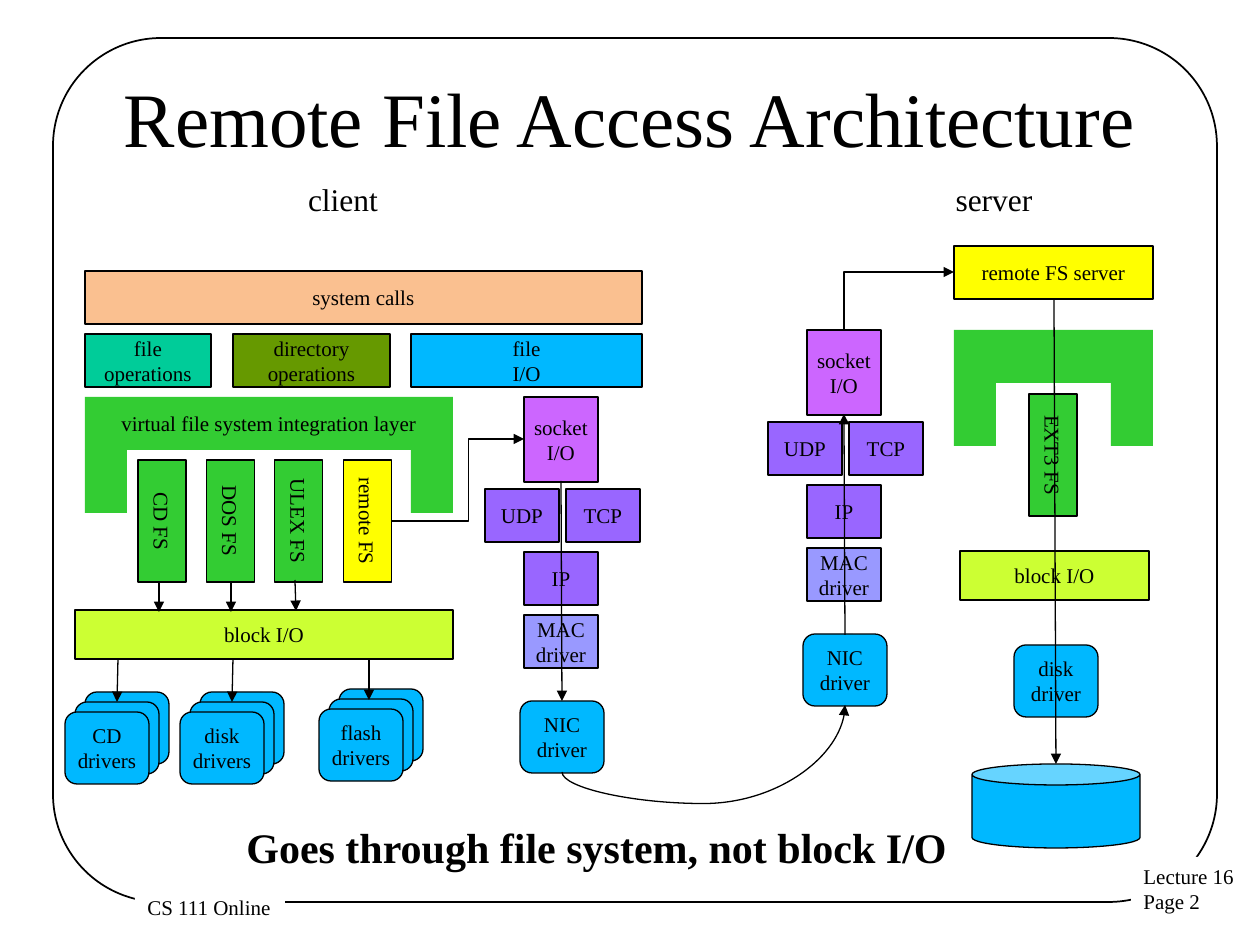
"""Build the Remote File Access Architecture slide."""
import pptx
import pptx.dml.color
import pptx.enum.shapes
import pptx.enum.text
import pptx.oxml
import pptx.oxml.ns
import pptx.util

RGBColor = pptx.dml.color.RGBColor
Kind = pptx.enum.shapes.MSO_SHAPE
Route = pptx.enum.shapes.MSO_CONNECTOR
Align = pptx.enum.text.PP_ALIGN
Anchor = pptx.enum.text.MSO_ANCHOR

BLACK = RGBColor(0x00, 0x00, 0x00)
WHITE = RGBColor(0xFF, 0xFF, 0xFF)
PEACH = RGBColor(0xFA, 0xC0, 0x90)
TEAL = RGBColor(0x00, 0xCC, 0x99)
OLIVE = RGBColor(0x66, 0x99, 0x00)
BLUE = RGBColor(0x00, 0xB8, 0xFF)
GREEN = RGBColor(0x33, 0xCC, 0x33)
YELLOW = RGBColor(0xFF, 0xFF, 0x00)
LIME = RGBColor(0xCC, 0xFF, 0x33)
MAGENTA = RGBColor(0xCC, 0x66, 0xFF)
PURPLE = RGBColor(0x99, 0x66, 0xFF)
LAVENDER = RGBColor(0x99, 0x99, 0xFF)

FONT = "Times New Roman"
PX_PER_INCH = 126
SLIDE_SIZE = (1260, 945)
FRAME = (53, 38, 1164, 864)

FOOTERS = [
    ("Lecture 16\nPage 2", (1131, 857, 117, 64)),
    ("CS 111 Online", (135, 888, 150, 38)),
]
TEXTS = [
    ("Remote File Access Architecture", (63, 38, 1134, 158), 44, False, Align.CENTER, True),
    ("client", (212, 174, 262, 50), 18, False, Align.CENTER, True),
    ("server", (863, 174, 262, 50), 18, False, Align.CENTER, True),
    ("Goes through file system, not block I/O", (234, 815, 734, 64), 24, True, Align.LEFT, False),
]
LAYERS = [
    ("system calls", (85, 271, 557, 53), PEACH),
    ("file\noperations", (85, 334, 126, 53), TEAL),
    ("directory\noperations", (233, 334, 157, 53), OLIVE),
    ("file\nI/O", (411, 334, 231, 53), BLUE),
    ("block I/O", (75, 610, 378, 49), LIME),
    ("remote FS server", (954, 246, 199, 53), YELLOW),
    ("block I/O", (960, 551, 189, 49), LIME),
]
ARCHES = [
    ("virtual file system integration layer", (85, 397), 368),
    ("", (954, 330), 199),
]
ARCH_THICKNESS, ARCH_LEG = 53, (42, 63)

CLIENT_FILE_SYSTEMS = [
    ("CD FS", GREEN), ("DOS FS", GREEN), ("ULEX FS", GREEN), ("remote FS", YELLOW),
]
FILE_SYSTEM_SIZE, FILE_SYSTEM_PITCH = (122, 48), 68.4
CLIENT_FILE_SYSTEM_START = (101, 497)
SERVER_FILE_SYSTEM = ("EXT3 FS", GREEN, (992, 431))

PROTOCOL_ORIGINS = [(524, 397), (807, 330)]
PROTOCOLS = [
    ("socket\nI/O", (0, 0, 74, 85), MAGENTA),
    ("UDP", (-39, 92, 74, 53), PURPLE),
    ("TCP", (42, 92, 74, 53), PURPLE),
    ("IP", (0, 155, 74, 53), PURPLE),
    ("MAC\ndriver", (0, 218, 74, 53), LAVENDER),
]
DRIVER_SIZE, CARD_STEP = (84, 72), 10
DRIVERS = [
    ("CD\ndrivers", (65, 712), 3),
    ("disk\ndrivers", (180, 712), 3),
    ("flash\ndrivers", (319, 709), 3),
    ("NIC\ndriver", (520, 701), 1),
    ("NIC\ndriver", (803, 634), 1),
    ("disk\ndriver", (1014, 645), 1),
]
DISK = (972, 764, 168, 84)

ARROWS = [
    ((159, 582), (159, 612)),
    ((231, 582), (231, 612)),
    ((295, 580), (296, 611)),
    ((118, 660), (117, 702)),
    ((233, 660), (232, 702)),
    ((369, 659), (369, 700)),
    ((561, 481), (562, 701)),
    ((845, 635), (844, 414)),
    ((1054, 299), (1056, 764)),
]
BENDS = [
    (Route.ELBOW, "bentConnector3", (391, 521), (524, 439), 0, 58400),
    (Route.ELBOW, "bentConnector2", (870, 246), (928, 356), 270, None),
    (Route.CURVE, "curvedConnector3", (737, 880), (670, 597), 90, -47100),
]


def emu(*lengths):
    return [pptx.util.Emu(round(length * 914400 / PX_PER_INCH)) for length in lengths]


def write(shape, text, size=12, bold=False, align=Align.CENTER, anchor=Anchor.MIDDLE, wrap=False):
    frame = shape.text_frame
    frame.word_wrap = wrap
    frame.vertical_anchor = anchor
    for index, line in enumerate(text.split("\n")):
        paragraph = frame.add_paragraph() if index else frame.paragraphs[0]
        paragraph.alignment = align
        run = paragraph.add_run()
        run.text = line
        run.font.name = FONT
        run.font.size = pptx.util.Pt(size)
        run.font.bold = bold
        run.font.color.rgb = BLACK


def add_box(slide, box, fill, text="", kind=Kind.RECTANGLE, line=0.75, **style):
    shape = slide.shapes.add_shape(kind, *emu(*box))
    shape.shadow.inherit = False
    if fill is None:
        shape.fill.background()
    else:
        shape.fill.solid()
        shape.fill.fore_color.rgb = fill
    if line:
        shape.line.color.rgb = BLACK
        shape.line.width = pptx.util.Pt(line)
    else:
        shape.line.fill.background()
    if text:
        write(shape, text, **style)
    return shape


def add_arch(slide, text, corner, width):
    left, top = corner
    leg_width, leg_height = ARCH_LEG
    add_box(slide, (left, top, width, ARCH_THICKNESS), GREEN, text, line=0)
    for leg_left in (left, left + width - leg_width):
        add_box(slide, (leg_left, top + ARCH_THICKNESS, leg_width, leg_height), GREEN, line=0)


def add_file_system(slide, text, fill, corner):
    add_box(slide, (*corner, *FILE_SYSTEM_SIZE), fill, text).rotation = 90


def add_driver(slide, text, corner, cards):
    left, top = corner
    for depth in reversed(range(cards)):
        shift = depth * CARD_STEP
        box = (left + shift, top - shift, *DRIVER_SIZE)
        add_box(slide, box, BLUE, "" if depth else text, Kind.ROUNDED_RECTANGLE)


def add_arrow(slide, begin, end, route=Route.STRAIGHT):
    connector = slide.shapes.add_connector(route, *emu(*begin, *end))
    connector.line.color.rgb = BLACK
    connector.line.width = pptx.util.Pt(0.75)
    properties = connector._element.spPr
    line = properties.find(pptx.oxml.ns.qn("a:ln"))
    line.append(line.makeelement(pptx.oxml.ns.qn("a:tailEnd"), {"type": "triangle"}))
    properties.append(properties.makeelement(pptx.oxml.ns.qn("a:effectLst")))
    return connector


def add_bend(slide, route, preset, begin, end, rotation, adjustment):
    properties = add_arrow(slide, begin, end, route)._element.spPr
    properties.find(pptx.oxml.ns.qn("a:xfrm")).set("rot", str(rotation * 60000))
    geometry = properties.find(pptx.oxml.ns.qn("a:prstGeom"))
    geometry.set("prst", preset)
    if adjustment is not None:
        guides = geometry.find(pptx.oxml.ns.qn("a:avLst"))
        guide = {"name": "adj1", "fmla": f"val {adjustment}"}
        guides.append(guides.makeelement(pptx.oxml.ns.qn("a:gd"), guide))


def main():
    presentation = pptx.Presentation()
    presentation.slide_width, presentation.slide_height = emu(*SLIDE_SIZE)
    slide = presentation.slides.add_slide(presentation.slide_layouts[6])

    add_box(slide, FRAME, None, kind=Kind.ROUNDED_RECTANGLE, line=1).adjustments[0] = 0.125
    for text, box in FOOTERS:
        add_box(slide, box, WHITE, text, line=0, align=Align.LEFT, anchor=Anchor.TOP)
    for text, box, size, bold, align, wrap in TEXTS:
        write(slide.shapes.add_textbox(*emu(*box)), text, size, bold, align, wrap=wrap)

    for text, box, fill in LAYERS:
        add_box(slide, box, fill, text)
    for arch in ARCHES:
        add_arch(slide, *arch)
    left, top = CLIENT_FILE_SYSTEM_START
    for index, (text, fill) in enumerate(CLIENT_FILE_SYSTEMS):
        add_file_system(slide, text, fill, (left + index * FILE_SYSTEM_PITCH, top))
    add_file_system(slide, *SERVER_FILE_SYSTEM)
    for left, top in PROTOCOL_ORIGINS:
        for text, (right_shift, down_shift, width, height), fill in PROTOCOLS:
            add_box(slide, (left + right_shift, top + down_shift, width, height), fill, text)
    for driver in DRIVERS:
        add_driver(slide, *driver)
    add_box(slide, DISK, BLUE, kind=Kind.CAN)

    for begin, end in ARROWS:
        add_arrow(slide, begin, end)
    for bend in BENDS:
        add_bend(slide, *bend)
    presentation.save("out.pptx")


if __name__ == "__main__":
    main()
